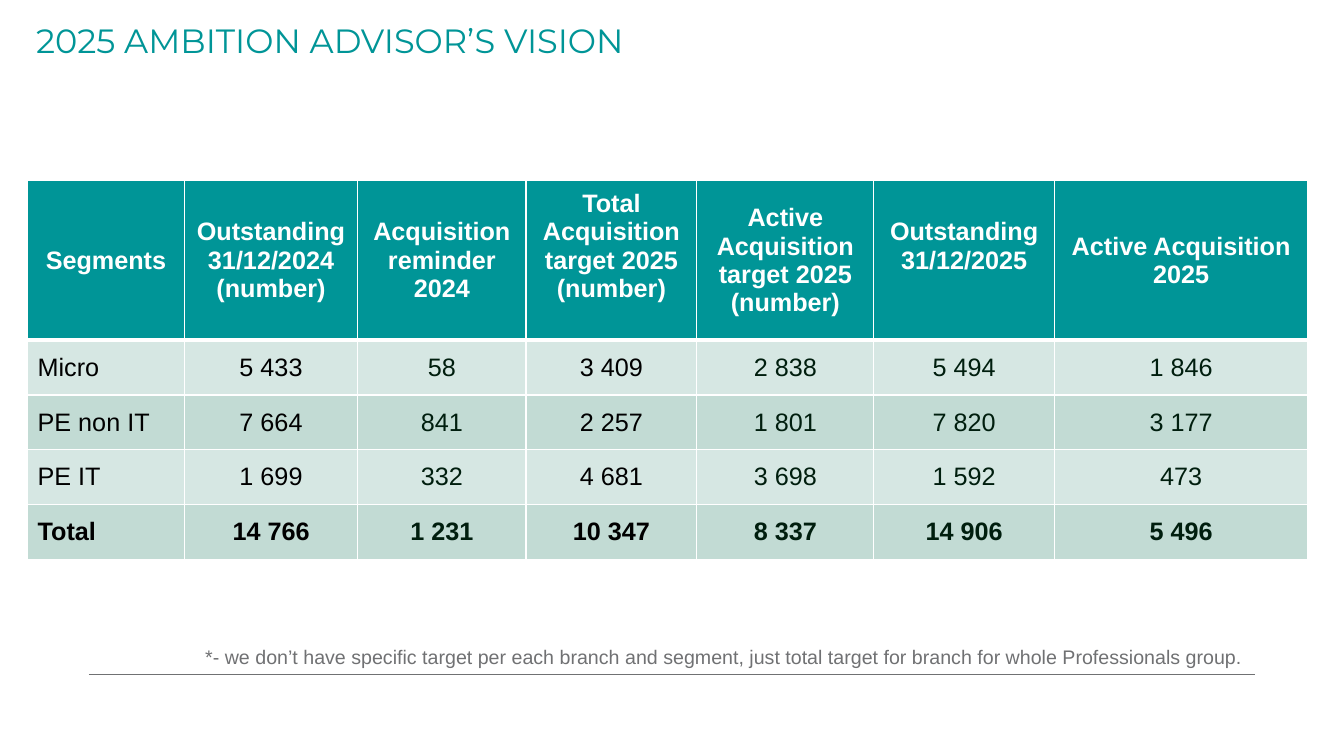
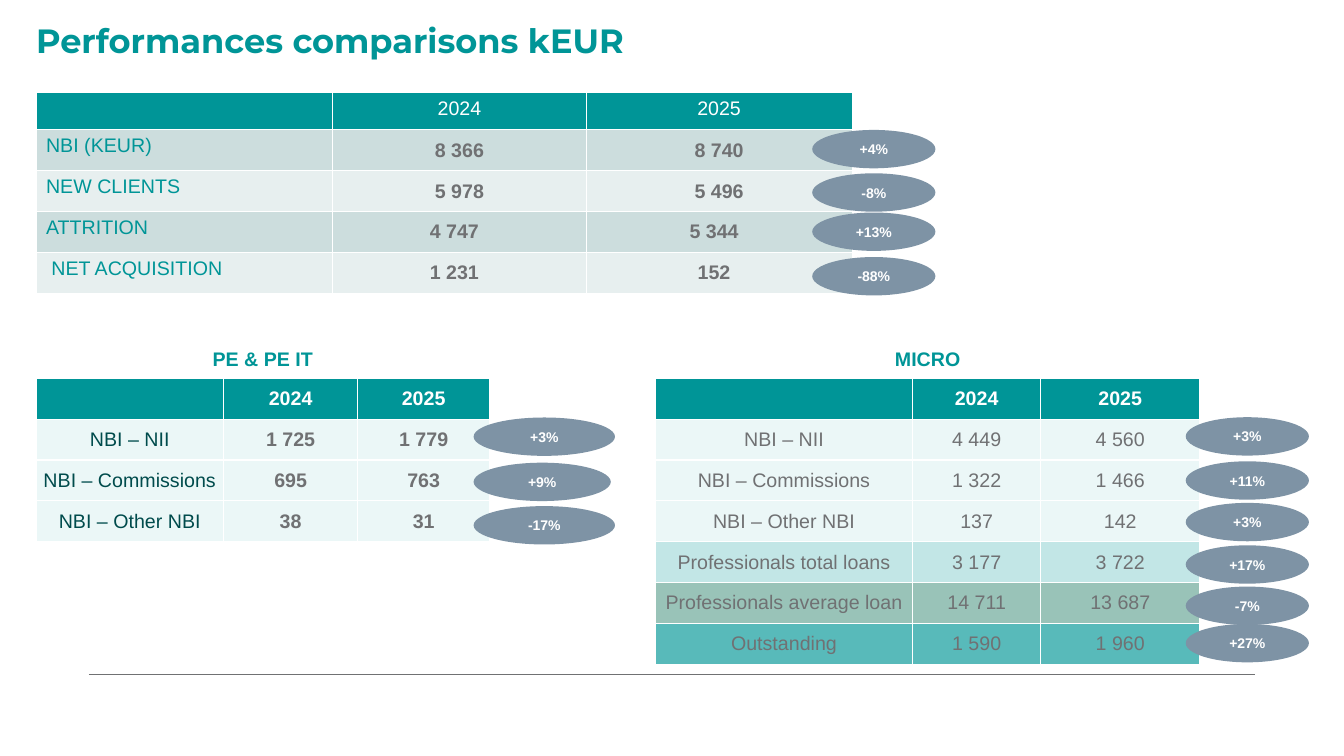
from itertools import accumulate

from lxml import etree
from pptx import Presentation
from pptx.dml.color import RGBColor
from pptx.enum.shapes import MSO_CONNECTOR, MSO_SHAPE
from pptx.enum.text import MSO_ANCHOR, PP_ALIGN
from pptx.oxml.ns import qn
from pptx.util import Pt

LEFT, CENTER = PP_ALIGN.LEFT, PP_ALIGN.CENTER
TOP, MIDDLE = MSO_ANCHOR.TOP, MSO_ANCHOR.MIDDLE
ELLIPSE, STRAIGHT = MSO_SHAPE.OVAL, MSO_CONNECTOR.STRAIGHT

COLORS = {
    "teal": "009597", "deep_teal": "004B4C", "white": "FFFFFF",
    "black": "000000", "ink": "001E0E", "gray": "707173", "badge": "7E93A5",
    "sage": "D6E7E3", "dark_sage": "C2DBD4",
    "mist": "E7EFEF", "dark_mist": "CCDDDD",
    "ice": "EBF7F7", "aqua": "C2E6E6", "moss": "99C3B8", "lagoon": "58BABA",
}
BODY, HEADING = "Arial", "Montserrat"
NO_MARGINS = (0, 0, 0, 0)
MARGINS = (7.2, 3.6, 7.2, 3.6)
SIDES = ("left", "top", "right", "bottom")
ROW = 29.2


def rgb(name):
    return RGBColor.from_string(COLORS[name])


def write(frame, text, align=LEFT, spacing=None, color="gray", **font):
    """Fill a text frame, one paragraph for each line of text."""
    font = {"name": BODY, "size": 14, "bold": False} | font
    for number, line in enumerate(text.split("\n")):
        para = frame.add_paragraph() if number else frame.paragraphs[0]
        para.alignment = align
        para.line_spacing = spacing
        span = para.add_run()
        span.text = line
        span.font.color.rgb = rgb(color)
        for key, value in font.items():
            setattr(span.font, key, Pt(value) if key == "size" else value)


def add_text(page, box, text, **format_values):
    frame = page.shapes.add_textbox(*map(Pt, box)).text_frame
    frame.word_wrap = True
    write(frame, text, **format_values)


def add_page(deck, title, bold=False):
    """Add a blank slide with the shared footer rule and title."""
    page = deck.slides.add_slide(deck.slide_layouts[6])
    rule = page.shapes.add_connector(STRAIGHT, Pt(63.5), Pt(481.5), Pt(896.5), Pt(481.5))
    rule.line.color.rgb = rgb("gray")
    rule.line.width = Pt(0.5)
    etree.SubElement(rule._element.spPr, qn("a:effectLst"))
    add_text(page, (18.7, 15, 903, 31), title, spacing=0.85, color="teal",
             name=HEADING, size=24, bold=bold)
    return page


def set_borders(cell, widths):
    """Draw white borders; widths run left, right, top, bottom."""
    properties = cell._tc.get_or_add_tcPr()
    for tag, width in zip(("lnL", "lnR", "lnT", "lnB"), widths):
        line = etree.SubElement(properties, qn(f"a:{tag}"), w=str(Pt(width)))
        fill = etree.SubElement(line, qn("a:solidFill"))
        etree.SubElement(fill, qn("a:srgbClr"), val=COLORS["white"])


def add_grid(page, left, top, widths, heights, rows, cell_style, header_rule=1):
    """Add a table; cell_style(row, column) gives the format of a cell."""
    box = map(Pt, (left, top, sum(widths), sum(heights)))
    table = page.shapes.add_table(len(rows), len(widths), *box).table
    table.first_row = table.horz_banding = False
    for tracks, sizes in ((table.columns, widths), (table.rows, heights)):
        for track, size in zip(tracks, sizes):
            setattr(track, "width" if sizes is widths else "height", Pt(size))
    for r, values in enumerate(rows):
        for c, text in enumerate(values):
            style = {"align": CENTER, "anchor": MIDDLE, "margins": NO_MARGINS}
            style |= cell_style(r, c)
            cell = table.cell(r, c)
            set_borders(cell, (1, 1, header_rule if r == 1 else 1,
                               header_rule if r == 0 else 1))
            cell.fill.solid()
            cell.fill.fore_color.rgb = rgb(style.pop("fill"))
            cell.vertical_anchor = style.pop("anchor")
            for side, margin in zip(SIDES, style.pop("margins")):
                setattr(cell, f"margin_{side}", Pt(margin))
            if text:
                write(cell.text_frame, text, **style)


def add_badges(page, left, top, badges):
    """Add change ellipses, each given as (offset from top, width, text)."""
    for offset, width, text in badges:
        box = map(Pt, (left, top + offset, width, 27.4))
        badge = page.shapes.add_shape(ELLIPSE, *box)
        badge.shadow.inherit = False
        badge.fill.solid()
        badge.fill.fore_color.rgb = rgb("badge")
        badge.line.fill.background()
        badge.text_frame.vertical_anchor = MIDDLE
        write(badge.text_frame, text, CENTER, color="white", size=10, bold=True)


def ambition_style(row, column):
    style = {"size": 18, "margins": MARGINS}
    if row == 0:
        raised = column in (3, 5)
        return style | {"fill": "teal", "color": "white", "bold": True,
                        "margins": (7.2, 3.6, 7.2, 24) if raised else MARGINS}
    return style | {
        "fill": "sage" if row % 2 else "dark_sage",
        "color": "black" if column in (0, 1, 3) else "ink",
        "bold": row == 4,
        "align": CENTER if column else LEFT,
    }


def performance_style(row, column):
    if row == 0:
        return {"fill": "teal", "color": "white", "anchor": TOP,
                "margins": MARGINS if column else NO_MARGINS}
    fill = "dark_mist" if row % 2 else "mist"
    if column == 0:
        indent = 11 if row == 4 else 7.2
        return {"fill": fill, "color": "teal", "align": LEFT, "anchor": TOP,
                "margins": (indent, 3.6, 7.2, 3.6)}
    return {"fill": fill, "bold": True,
            "margins": (0, 0, 7.2 if row > 2 else 0, 0)}


def small_business_style(row, column):
    if row == 0:
        return {"fill": "teal", "color": "white", "bold": True}
    return {"fill": "ice", "color": "gray" if column else "deep_teal",
            "bold": column > 0}


def micro_style(row, column):
    if row == 0:
        return small_business_style(row, column)
    return {"fill": ("ice", "ice", "ice", "aqua", "moss", "lagoon")[row - 1]}


def add_segment(page, left, top, caption, widths, rows, cell_style, badge_left, badges):
    """Add a captioned table with badges over its right edge."""
    table_top = top + 25.9
    add_text(page, (left, top, sum(widths), 24.5), caption, align=CENTER,
             color="teal", bold=True)
    add_grid(page, left, table_top, widths, [ROW] * len(rows), rows, cell_style)
    add_badges(page, left + sum(widths) + badge_left, table_top, badges)


def build_ambition(deck):
    page = add_page(deck, "2025 AMBITION ADVISOR’S VISION")
    rows = [
        ("Segments", "Outstanding\n31/12/2024 (number)", "Acquisition reminder 2024",
         "Total Acquisition target 2025 (number)",
         "Active Acquisition target 2025 (number)",
         "Outstanding 31/12/2025", "Active Acquisition 2025"),
        ("Micro", "5 433", "58", "3 409", "2 838", "5 494", "1 846"),
        ("PE non IT", "7 664", "841", "2 257", "1 801", "7 820", "3 177"),
        ("PE IT", "1 699", "332", "4 681", "3 698", "1 592", "473"),
        ("Total", "14 766", "1 231", "10 347", "8 337", "14 906", "5 496"),
    ]
    add_grid(page, 19.7, 129, (112, 123.8, 120.3, 122, 126.5, 129, 181),
             [108] + [39.1] * 4, rows, ambition_style, header_rule=3)
    add_text(page, (139.5, 457.2, 769, 24.5),
             "*- we don’t have specific target per each branch and segment, "
             "just total target for branch for whole Professionals group.")


def build_performance(deck):
    page = add_page(deck, "Performances comparisons kEUR", bold=True)
    left, top, widths = 25.7, 66.3, (212, 181, 190)
    rows = [
        ("", "2024", "2025"),
        ("NBI (KEUR)", "8 366", "8 740"),
        ("NEW CLIENTS", "5 978", "5 496"),
        ("ATTRITION", "4 747", "5 344"),
        ("NET ACQUISITION", "1 231", "152"),
    ]
    add_grid(page, left, top, widths, [26.5] + [ROW] * 4, rows, performance_style)
    edges = list(accumulate(widths, initial=left))
    add_badges(page, edges[-1] - 28.5, top, [
        (26.5, 88, "+4%"), (57.5, 88, "-8%"), (85.5, 88, "+13%"), (117.3, 88, "-88%")])

    add_segment(page, left, 244.3, "PE & PE IT", (134, 95.8, 94.3), [
        ("", "2024", "2025"),
        ("NBI – NII", "1 725", "1 779"),
        ("NBI – Commissions", "695", "763"),
        ("NBI – Other NBI", "38", "31"),
    ], small_business_style, -11.5, [
        (28, 101, "+3%"), (60.3, 98, "+9%"), (91.3, 101, "-17%")])

    add_segment(page, 468.3, 244.3, "MICRO", (183.5, 91.7, 113.5), [
        ("", "2024", "2025"),
        ("NBI – NII", "4 449", "4 560"),
        ("NBI – Commissions", "1 322", "1 466"),
        ("NBI – Other NBI", "137", "142"),
        ("Professionals total loans", "3 177", "3 722"),
        ("Professionals average loan", "14 711", "13 687"),
        ("Outstanding", "1 590", "1 960"),
    ], micro_style, -10, [
        (27.8, 88, "+3%"), (59.3, 88, "+11%"), (89, 88, "+3%"),
        (119.3, 88, "+17%"), (148.8, 88, "-7%"), (175.5, 88, "+27%")])


def main():
    deck = Presentation()
    deck.slide_width, deck.slide_height = Pt(960), Pt(540)
    build_ambition(deck)
    build_performance(deck)
    deck.save("out.pptx")


if __name__ == "__main__":
    main()
